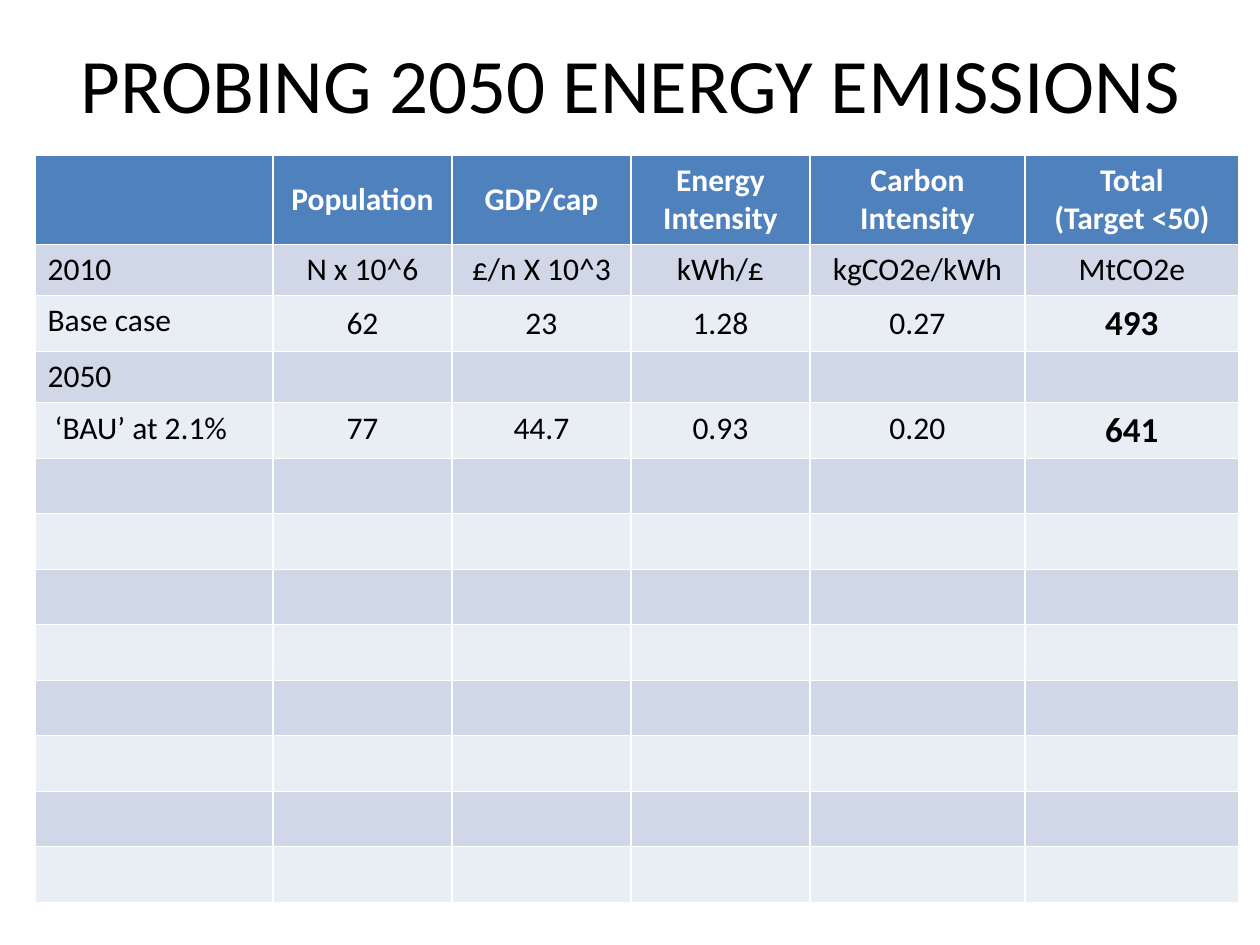
from pptx import Presentation
from pptx.dml.color import RGBColor
from pptx.enum.text import MSO_ANCHOR as Anchor, PP_ALIGN as Align
from pptx.util import Pt

TITLE = "PROBING 2050 ENERGY EMISSIONS"
HEADER = ["", "Population", "GDP/cap", "Energy Intensity", "Carbon Intensity",
          "Total\n(Target <50)"]
CASES = [
    ["2010", "N x 10^6", "£/n X 10^3", "kWh/£", "kgCO2e/kWh", "MtCO2e"],
    ["Base case", "62", "23", "1.28", "0.27", "493"],
    ["2050"],
    [" ‘BAU’ at 2.1%", "77", "44.7", "0.93", "0.20", "641"],
]
BLANK_ROWS = 8
TOTALS = {"493", "641"}

BLACK = RGBColor(0x00, 0x00, 0x00)
WHITE = RGBColor(0xFF, 0xFF, 0xFF)
HEADER_BLUE = RGBColor(0x4F, 0x81, 0xBD)
BANDS = [RGBColor(0xD0, 0xD8, 0xE8), RGBColor(0xE9, 0xED, 0xF4)]

PX = 914400 // 126
FONT = "Calibri"
TITLE_BOX = {"left": 64, "top": 4, "width": 1134, "height": 157}
TABLE_LEFT, TABLE_TOP = 35, 155
COLUMN_WIDTHS = [238, 179, 179, 179, 215, 214]
ROW_HEIGHTS = [89, 51, 56, 51, 56] + [55, 56] * (BLANK_ROWS // 2)


def write(frame, text, align, **font_format):
    frame.text = text
    for paragraph in frame.paragraphs:
        paragraph.alignment = align
        for run in paragraph.runs:
            run.font.color.rgb = font_format["color"]
            for key in ("size", "bold"):
                setattr(run.font, key, font_format[key])
            run.font.name = FONT


def fill_cell(cell, text, row, column):
    is_header, is_total = row == 0, text in TOTALS
    is_base_value = row == 2 and column > 0 and not is_total
    cell.fill.solid()
    cell.fill.fore_color.rgb = HEADER_BLUE if is_header else BANDS[(row - 1) % 2]
    cell.vertical_anchor = Anchor.MIDDLE if is_header or is_base_value else Anchor.TOP
    if text:
        write(cell.text_frame, text, Align.CENTER if column else Align.LEFT,
              size=Pt(20 if is_total else 18), bold=is_header or is_total,
              color=WHITE if is_header else BLACK)


def main():
    deck = Presentation()
    deck.slide_width, deck.slide_height = 1260 * PX, 945 * PX
    slide = deck.slides.add_slide(deck.slide_layouts[5])

    title = slide.shapes.title
    for side, length in TITLE_BOX.items():
        setattr(title, side, length * PX)
    title.text_frame.vertical_anchor = Anchor.MIDDLE
    write(title.text_frame, TITLE, Align.CENTER, size=Pt(44), bold=False, color=BLACK)

    rows = [HEADER] + CASES + [[]] * BLANK_ROWS
    emissions = slide.shapes.add_table(
        len(rows), len(HEADER), TABLE_LEFT * PX, TABLE_TOP * PX,
        sum(COLUMN_WIDTHS) * PX, sum(ROW_HEIGHTS) * PX).table
    for column, width in zip(emissions.columns, COLUMN_WIDTHS):
        column.width = width * PX
    for r, (texts, height) in enumerate(zip(rows, ROW_HEIGHTS)):
        emissions.rows[r].height = height * PX
        for c in range(len(HEADER)):
            fill_cell(emissions.cell(r, c), texts[c] if c < len(texts) else "", r, c)

    deck.save("out.pptx")


if __name__ == "__main__":
    main()
